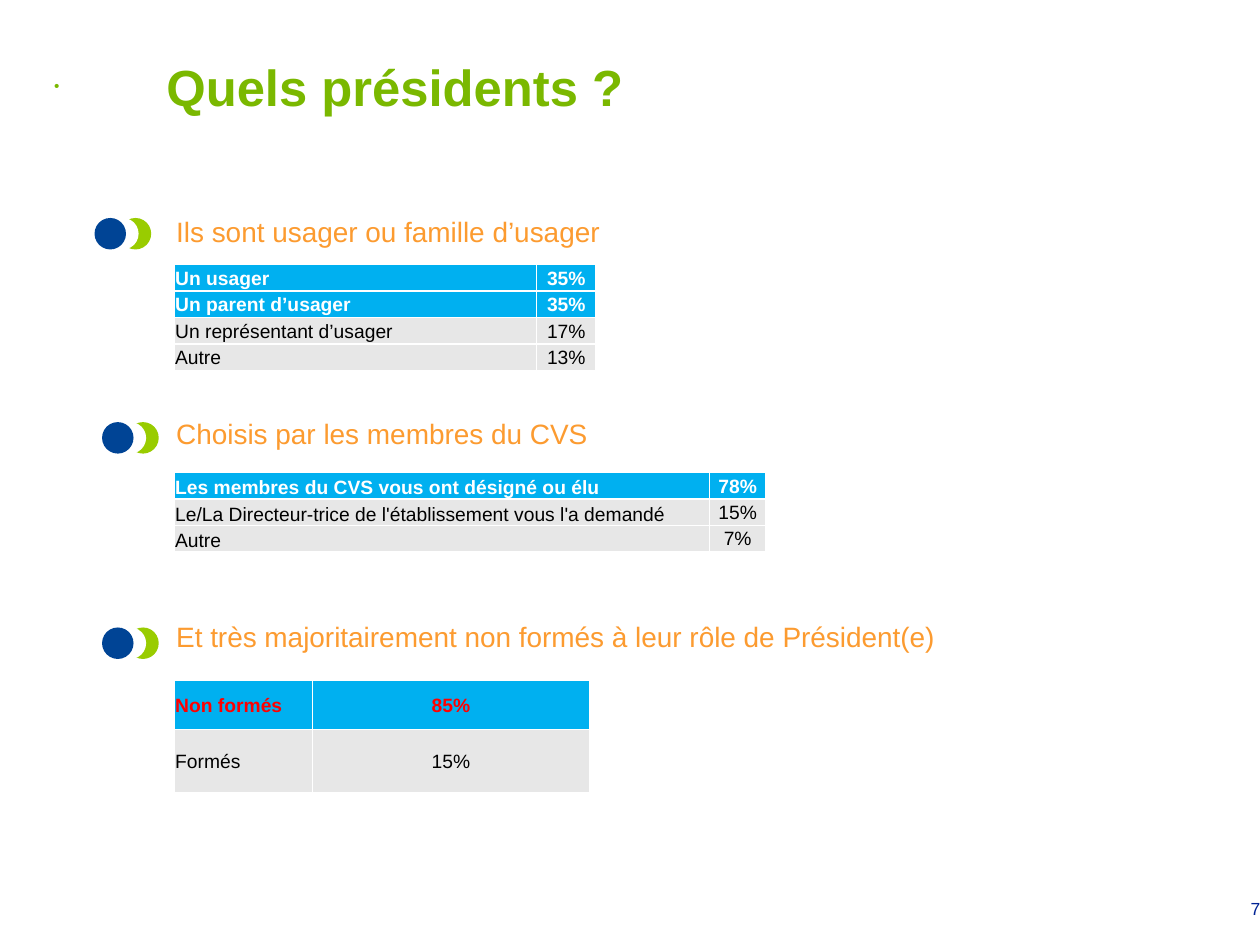
from dataclasses import dataclass

from lxml import etree
from pptx import Presentation
from pptx import util as u
from pptx.dml.color import RGBColor
from pptx.enum import shapes, text
from pptx.oxml import ns


@dataclass(frozen=True)
class Theme:
    font: str = "Arial"
    title: str = "7AB800"
    heading: str = "FC9B30"
    number: str = "002395"
    disc: str = "004495"
    crescent: str = "99CC00"
    white: str = "FFFFFF"
    black: str = "000000"
    alert: str = "FF0000"
    strong_fill: str = "00B0F0"
    plain_fill: str = "E7E7E7"
    title_size: int = 29
    heading_size: int = 16
    table_size: int = 11
    number_size: int = 10


THEME = Theme()
LEFT, CENTER, RIGHT = text.PP_ALIGN.LEFT, text.PP_ALIGN.CENTER, text.PP_ALIGN.RIGHT
MIDDLE, BOTTOM = text.MSO_ANCHOR.MIDDLE, text.MSO_ANCHOR.BOTTOM


def inches(*values):
    return [u.Inches(value) for value in values]


def add_xml(parent, tag, **attributes):
    return etree.SubElement(parent, ns.qn(tag), attributes)


def style(para, size, color, bold=False, align=LEFT):
    para.alignment = align
    para.font.name = THEME.font
    para.font.size = u.Pt(size)
    para.font.bold = bold
    para.font.color.rgb = RGBColor.from_string(color)


def set_title(page, words):
    title = page.shapes.title
    title.left, title.top, title.width, title.height = inches(0.33, 0.06, 8.92, 1.25)
    title.text_frame.text = words
    title.text_frame.vertical_anchor = MIDDLE
    para = title.text_frame.paragraphs[0]
    # Small bullet on a hanging indent
    properties = para._p.get_or_add_pPr()
    properties.set("marL", str(u.Inches(0.89)))
    properties.set("indent", str(u.Inches(-0.89)))
    add_xml(properties, "a:buSzPct", val="30000")
    add_xml(properties, "a:buFont", typeface=THEME.font)
    add_xml(properties, "a:buChar", char="•")
    style(para, THEME.title_size, THEME.title, bold=True)


def add_text(page, words, at, size, color, align=LEFT):
    box = page.shapes.add_textbox(*inches(*at))
    box.text_frame.word_wrap = True
    box.text_frame.text = words
    style(box.text_frame.paragraphs[0], size, color, align=align)


def add_marker(page, left, top):
    """Blue disc in front of a green crescent."""
    group = page.shapes.add_group_shape()
    for step, color in ((2, THEME.crescent), (1, THEME.white), (0, THEME.disc)):
        disc = group.shapes.add_shape(
            shapes.MSO_SHAPE.OVAL, *inches(left + 0.1 * step, top, 0.25, 0.25))
        disc.shadow.inherit = False
        disc.fill.solid()
        disc.fill.fore_color.rgb = RGBColor.from_string(color)
        disc.line.fill.background()


def add_borders(cell):
    properties = cell._tc.get_or_add_tcPr()
    for side in ("a:lnL", "a:lnR", "a:lnT", "a:lnB"):
        line = add_xml(properties, side, w=str(u.Pt(1)))
        add_xml(add_xml(line, "a:solidFill"), "a:srgbClr", val=THEME.white)


def format_cell(cell, words, align, anchor, strong, strong_color):
    cell.margin_left = cell.margin_right = cell.margin_top = u.Inches(0.01)
    cell.margin_bottom = 0
    cell.vertical_anchor = anchor
    cell.text = words
    style(cell.text_frame.paragraphs[0], THEME.table_size,
          strong_color if strong else THEME.black, strong, align)
    add_borders(cell)
    cell.fill.solid()
    cell.fill.fore_color.rgb = RGBColor.from_string(
        THEME.strong_fill if strong else THEME.plain_fill)


def add_answers(page, top, widths, heights, answers, strong_rows=1,
                label_anchor=MIDDLE, strong_color=THEME.white):
    frame = page.shapes.add_table(
        len(answers), 2, *inches(1.38, top, sum(widths), sum(heights)))
    table = frame.table
    table.first_row = table.horz_banding = False
    for column, width in zip(table.columns, widths):
        column.width = u.Inches(width)
    for index, (label, share) in enumerate(answers):
        table.rows[index].height = u.Inches(heights[index])
        strong = index < strong_rows
        format_cell(table.cell(index, 0), label, LEFT, label_anchor, strong, strong_color)
        format_cell(table.cell(index, 1), share, CENTER, MIDDLE, strong, strong_color)


def main():
    deck = Presentation()
    deck.slide_width, deck.slide_height = inches(10, 7.5)
    page = deck.slides.add_slide(deck.slide_layouts[5])

    set_title(page, "Quels présidents ?")

    # Section headings with their markers
    sections = (
        ("Ils sont usager ou famille d’usager", 0.75, 1.73),
        ("Choisis par les membres du CVS", 0.81, 3.35),
        ("Et très majoritairement non formés à leur rôle de Président(e)", 0.81, 4.98),
    )
    for index, (heading, left, top) in enumerate(sections):
        add_text(page, heading, (1.3, 1.65 + 1.61 * index, 8.58, 0.36),
                 THEME.heading_size, THEME.heading)
        add_marker(page, left, top)

    # Who the presidents are
    add_answers(page, 2.1, (2.88, 0.47), [0.21] * 4, (
        ("Un usager", "35%"),
        ("Un parent d’usager", "35%"),
        ("Un représentant d’usager", "17%"),
        ("Autre", "13%"),
    ), strong_rows=2)

    # How they were chosen
    add_answers(page, 3.75, (4.25, 0.45), [0.21] * 3, (
        ("Les membres du CVS vous ont désigné ou élu", "78%"),
        ("Le/La Directeur-trice de l'établissement vous l'a demandé", "15%"),
        ("Autre", "7%"),
    ), label_anchor=BOTTOM)

    # Whether they were trained
    add_answers(page, 5.4, (1.1, 2.2), (0.39, 0.5), (
        ("Non formés", "85%"),
        ("Formés", "15%"),
    ), strong_color=THEME.alert)

    # Page number
    add_text(page, "7", (9.6, 7.08, 0.5, 0.5), THEME.number_size, THEME.number, RIGHT)

    deck.save("out.pptx")


if __name__ == "__main__":
    main()
